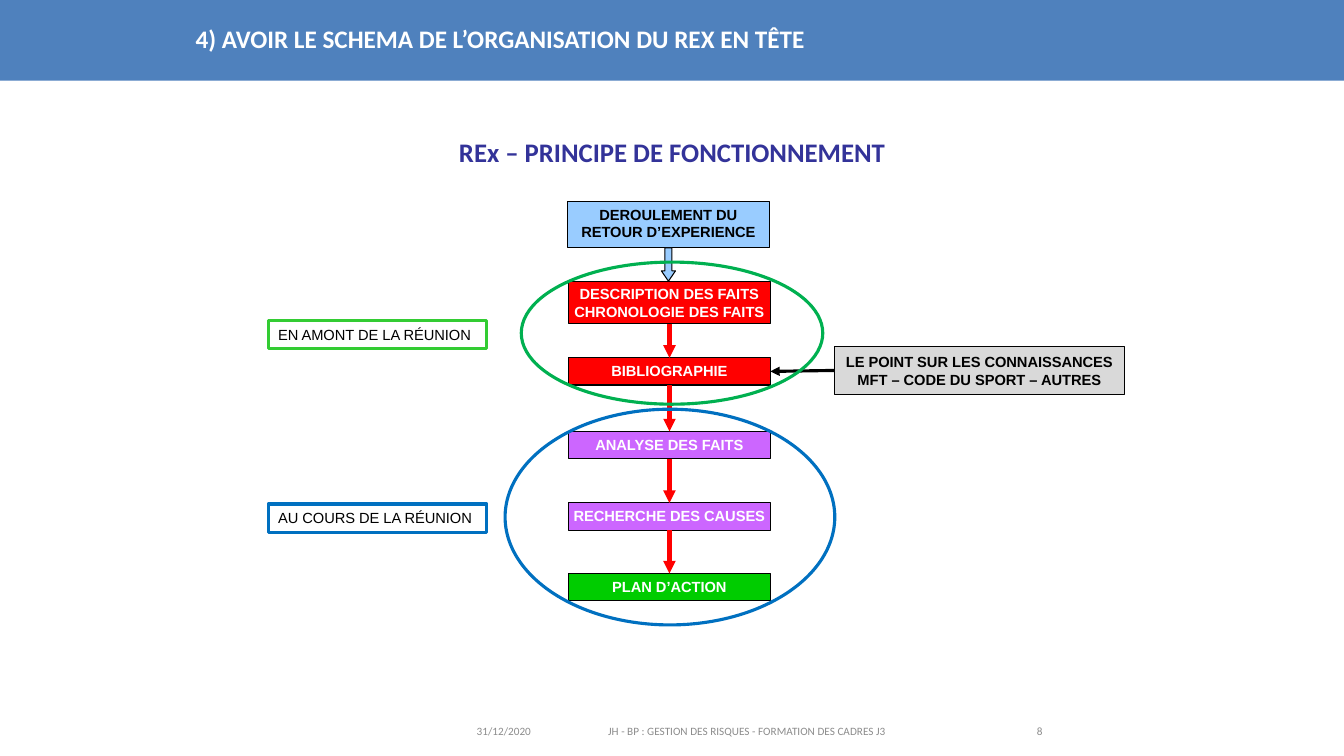
from lxml.etree import SubElement
from pptx import Presentation
from pptx.dml.color import RGBColor
from pptx.enum.shapes import MSO_CONNECTOR, MSO_SHAPE
from pptx.enum.text import MSO_ANCHOR, MSO_AUTO_SIZE, PP_ALIGN
from pptx.oxml.ns import qn
from pptx.util import Inches, Pt

COLORS = {
    "band": "4F81BD", "heading": "333399", "footer": "8C8C8C",
    "white": "FFFFFF", "black": "000000", "red": "FF0000",
    "violet": "CC66FF", "green": "00CC00", "sky": "99CCFF", "gray": "D9D9D9",
    "before_ring": "00B050", "before_label": "33CC33", "during": "0070C0",
}


def write(sp, lines, size, font, color, bold=False, align=PP_ALIGN.CENTER,
          anchor=MSO_ANCHOR.MIDDLE, wrap=True, margins=(0.1, 0.05)):
    tf = sp.text_frame
    tf.auto_size = MSO_AUTO_SIZE.NONE
    tf.word_wrap = wrap
    tf.vertical_anchor = anchor
    tf.margin_left = tf.margin_right = Inches(margins[0])
    tf.margin_top = tf.margin_bottom = Inches(margins[1])
    for i, line in enumerate(lines):
        p = tf.add_paragraph() if i else tf.paragraphs[0]
        p.alignment = align
        r = p.add_run()
        r.text = line
        r.font.size, r.font.name, r.font.bold = Pt(size), font, bold
        r.font.color.rgb = RGBColor.from_string(COLORS[color])


def add_figure(kind, box, fill=None, line=None, width=0.75):
    """Add a preset shape; without a fill or line colour that part is empty."""
    sp = s.shapes.add_shape(kind, *map(Inches, box))
    sp.shadow.inherit = False
    if fill:
        sp.fill.solid()
        sp.fill.fore_color.rgb = RGBColor.from_string(COLORS[fill])
    else:
        sp.fill.background()
    if line:
        sp.line.color.rgb = RGBColor.from_string(COLORS[line])
        sp.line.width = Pt(width)
    else:
        sp.line.fill.background()
    return sp


prs = Presentation()
prs.slide_width, prs.slide_height = Inches(13.33), Inches(7.5)
s = prs.slides.add_slide(prs.slide_layouts[5])

# Title on its band
band = add_figure(MSO_SHAPE.RECTANGLE, (0, -0.03, 13.33, 0.83), "band")
s.shapes._spTree.insert(2, band._element)
title = s.shapes.title
title.left, title.top, title.width, title.height = map(Inches, (1.84, 0.07, 7.91, 0.62))
write(title, ["4) AVOIR LE SCHEMA DE L’ORGANISATION DU REX EN TÊTE"],
      18, "Calibri", "white", True, PP_ALIGN.LEFT)

# Heading and footer
heading = s.shapes.add_textbox(*map(Inches, (3.29, 1.16, 6.75, 0.7)))
write(heading, ["REx – PRINCIPE DE FONCTIONNEMENT"], 19.1, "Calibri", "heading", True)
for left, width, text, align in [
    (4.63, 0.75, "31/12/2020", PP_ALIGN.LEFT),
    (5.9, 3.02, "JH - BP : GESTION DES RISQUES - FORMATION DES CADRES J3", PP_ALIGN.CENTER),
    (9.42, 1.02, "8", PP_ALIGN.RIGHT),
]:
    footer = s.shapes.add_textbox(*map(Inches, (left, 7.14, width, 0.22)))
    write(footer, [text], 8, "Calibri", "footer", align=align)

# Steps of the process and the knowledge box beside them
TOP, MIDDLE = MSO_ANCHOR.TOP, MSO_ANCHOR.MIDDLE
boxes = []
for left, top, width, height, fill, color, anchor, lines in [
    (5.64, 2.79, 2, 0.42, "red", "white", TOP, ["DESCRIPTION DES FAITS", "CHRONOLOGIE DES FAITS"]),
    (5.64, 3.55, 2, 0.27, "red", "white", TOP, ["BIBLIOGRAPHIE"]),
    (5.64, 4.28, 2, 0.27, "violet", "white", TOP, ["ANALYSE DES FAITS"]),
    (5.64, 4.99, 2, 0.27, "violet", "white", TOP, ["RECHERCHE DES CAUSES"]),
    (5.64, 5.69, 2, 0.27, "green", "white", TOP, ["PLAN D’ACTION"]),
    (5.63, 2, 2, 0.46, "sky", "black", TOP, ["DEROULEMENT DU", "RETOUR D’EXPERIENCE"]),
    (8.28, 3.44, 2.87, 0.47, "gray", "black", MIDDLE,
     ["LE POINT SUR LES CONNAISSANCES", "MFT – CODE DU SPORT – AUTRES"]),
]:
    sp = add_figure(MSO_SHAPE.RECTANGLE, (left, top, width, height), fill, "black")
    write(sp, lines, 10.5, "Arial", color, True, anchor=anchor, wrap=False,
          margins=(0.07, 0.04))
    boxes.append(sp)
steps, knowledge = boxes[:5], boxes[6]

start_arrow = add_figure(MSO_SHAPE.DOWN_ARROW, (6.56, 2.46, 0.14, 0.33), "sky", "black")
start_arrow.adjustments[0], start_arrow.adjustments[1] = 0.5, 0.73

# Arrows: source box and side, target box and side
links = [(a, 2, b, 0, "red", 3) for a, b in zip(steps, steps[1:])]
links.append((knowledge, 1, steps[1], 3, "black", 2.25))
for source, out_side, target, in_side, color, width in links:
    c = s.shapes.add_connector(MSO_CONNECTOR.STRAIGHT, 0, 0, 0, 0)
    c.begin_connect(source, out_side)
    c.end_connect(target, in_side)
    c.line.color.rgb = RGBColor.from_string(COLORS[color])
    c.line.width = Pt(width)
    SubElement(c.line._get_or_add_ln(), qn("a:tailEnd"), type="triangle")
    SubElement(c._element.spPr, qn("a:effectLst"))

# Phases: ring around the steps and label on the left
for ring, ring_color, label_top, label_color, text in [
    ((5.17, 2.6, 2.99, 1.41), "before_ring", 3.18, "before_label", "EN AMONT DE LA RÉUNION"),
    ((5.01, 4.06, 3.27, 2.14), "during", 5, "during", "AU COURS DE LA RÉUNION"),
]:
    add_figure(MSO_SHAPE.OVAL, ring, None, ring_color, 2.25)
    label = add_figure(MSO_SHAPE.RECTANGLE, (2.66, label_top, 2.17, 0.28),
                       None, label_color, 2.25)
    write(label, [text], 10.5, "Arial", "black", align=PP_ALIGN.LEFT,
          anchor=TOP, wrap=False)

prs.save("out.pptx")
